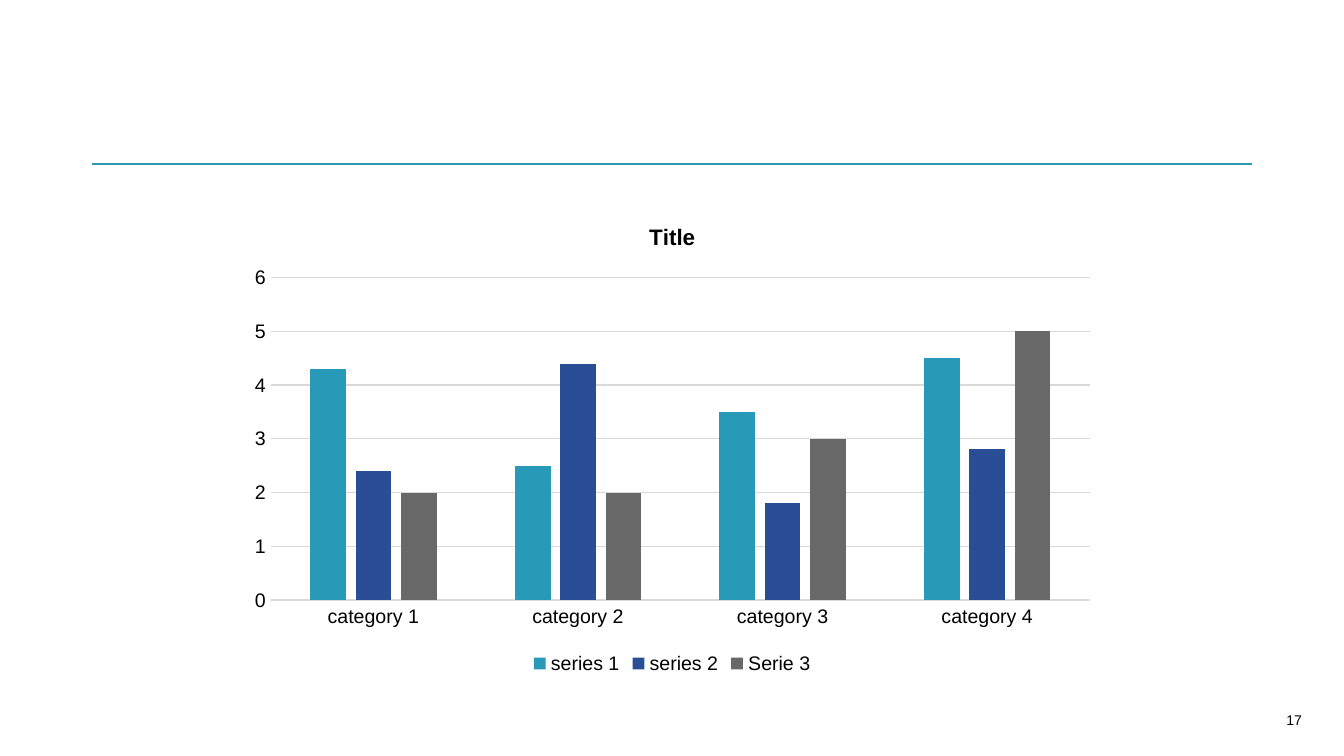
from dataclasses import dataclass

from lxml import etree
from pptx import Presentation
from pptx.chart.data import CategoryChartData
from pptx.dml.color import RGBColor
from pptx.enum.chart import XL_CHART_TYPE, XL_LEGEND_POSITION, XL_TICK_MARK
from pptx.enum.shapes import MSO_CONNECTOR
from pptx.enum.text import MSO_ANCHOR, PP_ALIGN
from pptx.oxml.ns import qn
from pptx.util import Pt

COLUMNS = XL_CHART_TYPE.COLUMN_CLUSTERED
LEGEND_BOTTOM = XL_LEGEND_POSITION.BOTTOM
NO_TICKS = XL_TICK_MARK.NONE
STRAIGHT = MSO_CONNECTOR.STRAIGHT
MIDDLE = MSO_ANCHOR.MIDDLE
RIGHT = PP_ALIGN.RIGHT
BLANK_LAYOUT = 6


@dataclass(frozen=True)
class Theme:
    font: str = "Arial"
    text: str = "000000"
    accent: str = "2899B6"
    grid: str = "D9D9D9"
    series: tuple = ("2899B6", "2A4E95", "696868")
    title_size: float = 12
    chart_size: float = 10.5
    number_size: float = 7.5


THEME = Theme()
CATEGORIES = ["category 1", "category 2", "category 3", "category 4"]
SERIES = {
    "series 1": (4.3, 2.5, 3.5, 4.5),
    "series 2": (2.4, 4.4, 1.8, 2.8),
    "Serie 3": (2, 2, 3, 5),
}


def style_font(font, size, bold=False):
    font.name = THEME.font
    font.size = Pt(size)
    font.bold = bold
    font.color.rgb = RGBColor.from_string(THEME.text)


def style_line(line, color, width):
    line.color.rgb = RGBColor.from_string(color)
    line.width = Pt(width)


def add_rule(page, left, right, top):
    rule = page.shapes.add_connector(STRAIGHT, Pt(left), Pt(top), Pt(right), Pt(top))
    style_line(rule.line, THEME.accent, 1)
    etree.SubElement(rule._element.spPr, qn("a:effectLst"))


def add_page_number(page, number, left, top, width, height):
    box = page.shapes.add_textbox(Pt(left), Pt(top), Pt(width), Pt(height))
    frame = box.text_frame
    frame.word_wrap = True
    frame.vertical_anchor = MIDDLE
    frame.margin_left, frame.margin_right = Pt(5), Pt(0)
    frame.margin_top = frame.margin_bottom = Pt(2.7)
    para = frame.paragraphs[0]
    para.alignment = RIGHT
    span = para.add_run()
    span.text = number
    style_font(span.font, THEME.number_size)


def style_axes(chart):
    for axis in (chart.category_axis, chart.value_axis):
        axis.major_tick_mark = axis.minor_tick_mark = NO_TICKS
        style_font(axis.tick_labels.font, THEME.chart_size)
    style_line(chart.category_axis.format.line, THEME.grid, 0.75)
    values = chart.value_axis
    values.minimum_scale, values.maximum_scale, values.major_unit = 0, 6, 1
    values.format.line.fill.background()
    values.has_major_gridlines = True
    style_line(values.major_gridlines.format.line, THEME.grid, 0.75)


def style_columns(plot):
    plot.gap_width = 219
    plot.overlap = -27
    plot.vary_by_categories = False
    for series, color in zip(plot.series, THEME.series):
        series.format.fill.solid()
        series.format.fill.fore_color.rgb = RGBColor.from_string(color)


def add_column_chart(page, title, left, top, width, height):
    data = CategoryChartData()
    data.categories = CATEGORIES
    for name, values in SERIES.items():
        data.add_series(name, values)
    chart = page.shapes.add_chart(
        COLUMNS, Pt(left), Pt(top), Pt(width), Pt(height), data
    ).chart
    style_font(chart.font, THEME.chart_size)

    chart.has_title = True
    span = chart.chart_title.text_frame.paragraphs[0].add_run()
    span.text = title
    style_font(span.font, THEME.title_size, bold=True)
    chart.chart_title.include_in_layout = False

    chart.has_legend = True
    chart.legend.position = LEGEND_BOTTOM
    chart.legend.include_in_layout = False
    style_font(chart.legend.font, THEME.chart_size)

    style_axes(chart)
    style_columns(chart.plots[0])


def main():
    deck = Presentation()
    deck.slide_width, deck.slide_height = Pt(720), Pt(405)
    page = deck.slides.add_slide(deck.slide_layouts[BLANK_LAYOUT])
    add_rule(page, left=49.5, right=670.5, top=87.75)
    add_page_number(page, "17", left=535.5, top=375, width=162, height=21.6)
    add_column_chart(page, "Title", left=127.25, top=108.75, width=465.75, height=255.6)
    deck.save("out.pptx")


if __name__ == "__main__":
    main()
